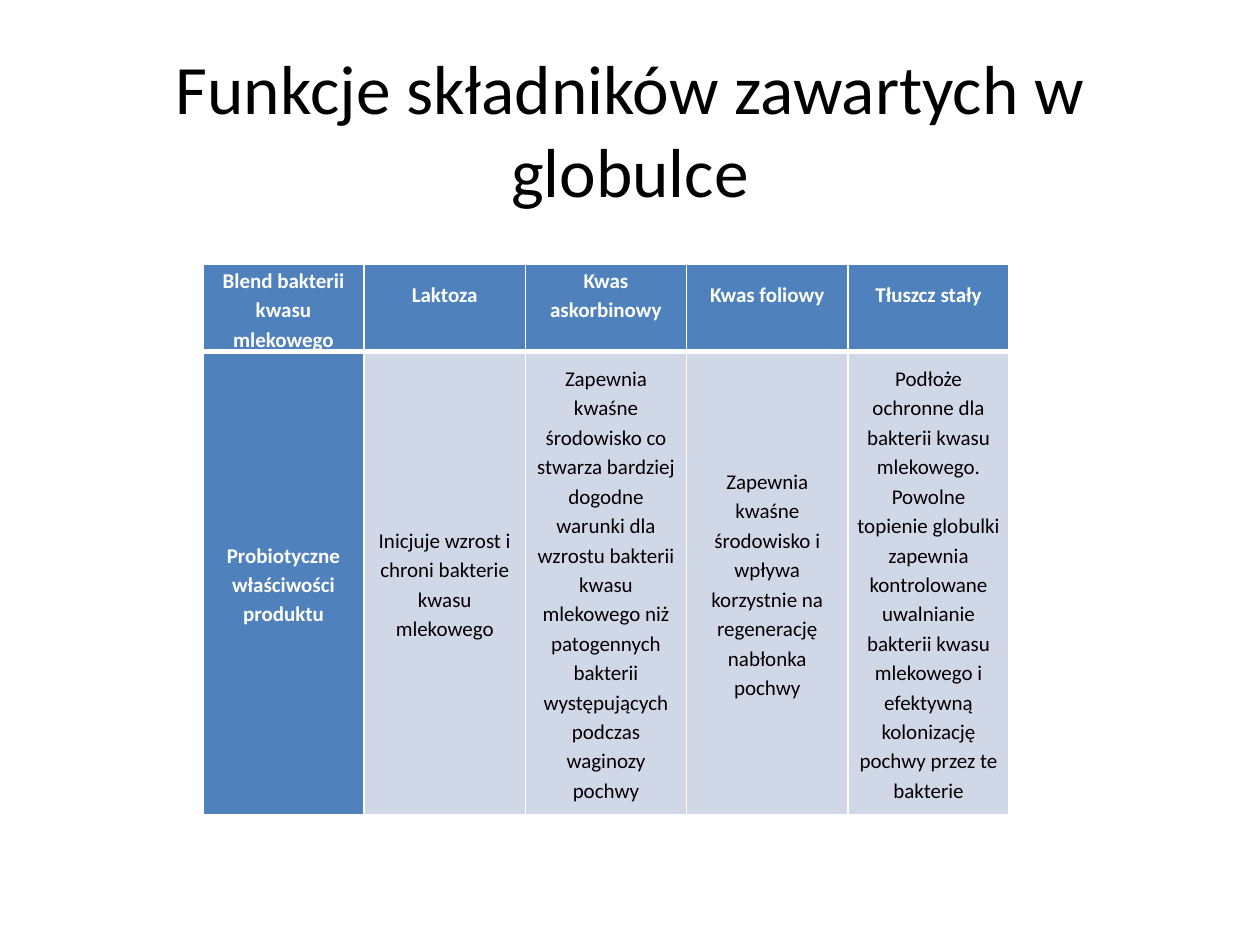
from dataclasses import dataclass

from lxml.etree import SubElement
from pptx import Presentation
from pptx.dml.color import RGBColor
from pptx.enum.text import MSO_ANCHOR, PP_ALIGN
from pptx.oxml.ns import qn
from pptx.table import _Cell
from pptx.text.text import TextFrame
from pptx.util import Inches, Pt

BLACK = RGBColor(0x00, 0x00, 0x00)
WHITE = RGBColor(0xFF, 0xFF, 0xFF)
BLUE = RGBColor(0x4F, 0x81, 0xBD)
PALE_BLUE = RGBColor(0xD0, 0xD8, 0xE8)

COLUMN_WIDTH = Inches(1.28)
HEADER_HEIGHT = Inches(0.69)
FUNCTION_HEIGHT = Inches(3.68)
LINE_HEIGHT = Inches(0.23)
THIN, THICK = Pt(1), Pt(3)


@dataclass(frozen=True)
class Ingredient:
    name: str
    function: str
    name_bottom: int = LINE_HEIGHT


INGREDIENTS = [
    Ingredient("Blend bakterii kwasu mlekowego", "Probiotyczne właściwości produktu", 0),
    Ingredient("Laktoza", "Inicjuje wzrost i chroni bakterie kwasu mlekowego"),
    Ingredient(
        "Kwas askorbinowy",
        "Zapewnia kwaśne środowisko co stwarza bardziej dogodne warunki dla "
        "wzrostu bakterii kwasu mlekowego niż patogennych bakterii "
        "występujących podczas waginozy pochwy",
    ),
    Ingredient(
        "Kwas foliowy",
        "Zapewnia kwaśne środowisko i wpływa korzystnie na regenerację nabłonka pochwy",
    ),
    Ingredient(
        "Tłuszcz stały",
        "Podłoże ochronne dla bakterii kwasu mlekowego. Powolne topienie "
        "globulki zapewnia kontrolowane uwalnianie bakterii kwasu mlekowego "
        "i efektywną kolonizację pochwy przez te bakterie",
    ),
]


def write(frame: TextFrame, text: str, *, size: float, color: RGBColor,
          bold: bool = False, spacing: float = 1.0) -> None:
    frame.word_wrap = True
    paragraph = frame.paragraphs[0]
    paragraph.alignment = PP_ALIGN.CENTER
    paragraph.line_spacing = spacing
    run = paragraph.add_run()
    run.text = text
    run.font.name = "Calibri"
    run.font.size = Pt(size)
    run.font.bold = bold
    run.font.color.rgb = color


def add_borders(cell: _Cell, *, top: int, bottom: int) -> None:
    properties = cell._tc.get_or_add_tcPr()
    sides = {"a:lnL": THIN, "a:lnR": THIN, "a:lnT": top, "a:lnB": bottom}
    for position, (side, width) in enumerate(sides.items()):
        line = SubElement(properties, qn(side), w=str(int(width)))
        fill = SubElement(line, qn("a:solidFill"))
        SubElement(fill, qn("a:srgbClr"), val=str(WHITE))
        properties.insert(position, line)


def fill_cell(cell: _Cell, text: str, *, emphasized: bool, top: int,
              bottom: int, margin_bottom: int = 0) -> None:
    cell.vertical_anchor = MSO_ANCHOR.MIDDLE
    cell.margin_left = cell.margin_right = Inches(0.07)
    cell.margin_top = 0
    cell.margin_bottom = margin_bottom
    cell.fill.solid()
    cell.fill.fore_color.rgb = BLUE if emphasized else PALE_BLUE
    add_borders(cell, top=top, bottom=bottom)
    write(cell.text_frame, text, size=12, bold=emphasized,
          color=WHITE if emphasized else BLACK, spacing=1.15)


def main() -> None:
    presentation = Presentation()
    presentation.slide_width = Inches(10)
    presentation.slide_height = Inches(7.5)
    slide = presentation.slides.add_slide(presentation.slide_layouts[6])

    heading = slide.shapes.add_textbox(
        Inches(0.5), Inches(0.6), Inches(9), Inches(1.42)).text_frame
    heading.vertical_anchor = MSO_ANCHOR.MIDDLE
    heading.margin_bottom = Inches(0.63)
    write(heading, "Funkcje składników zawartych w globulce", size=39.6, color=BLACK)

    functions = slide.shapes.add_table(
        2, len(INGREDIENTS), Inches(1.61), Inches(2.1),
        COLUMN_WIDTH * len(INGREDIENTS), HEADER_HEIGHT + FUNCTION_HEIGHT).table
    functions.rows[0].height = HEADER_HEIGHT
    functions.rows[1].height = FUNCTION_HEIGHT

    for column, ingredient in enumerate(INGREDIENTS):
        functions.columns[column].width = COLUMN_WIDTH
        fill_cell(functions.cell(0, column), ingredient.name, emphasized=True,
                  top=THIN, bottom=THICK, margin_bottom=ingredient.name_bottom)
        fill_cell(functions.cell(1, column), ingredient.function,
                  emphasized=column == 0, top=THICK, bottom=THIN)

    presentation.save("out.pptx")


if __name__ == "__main__":
    main()
